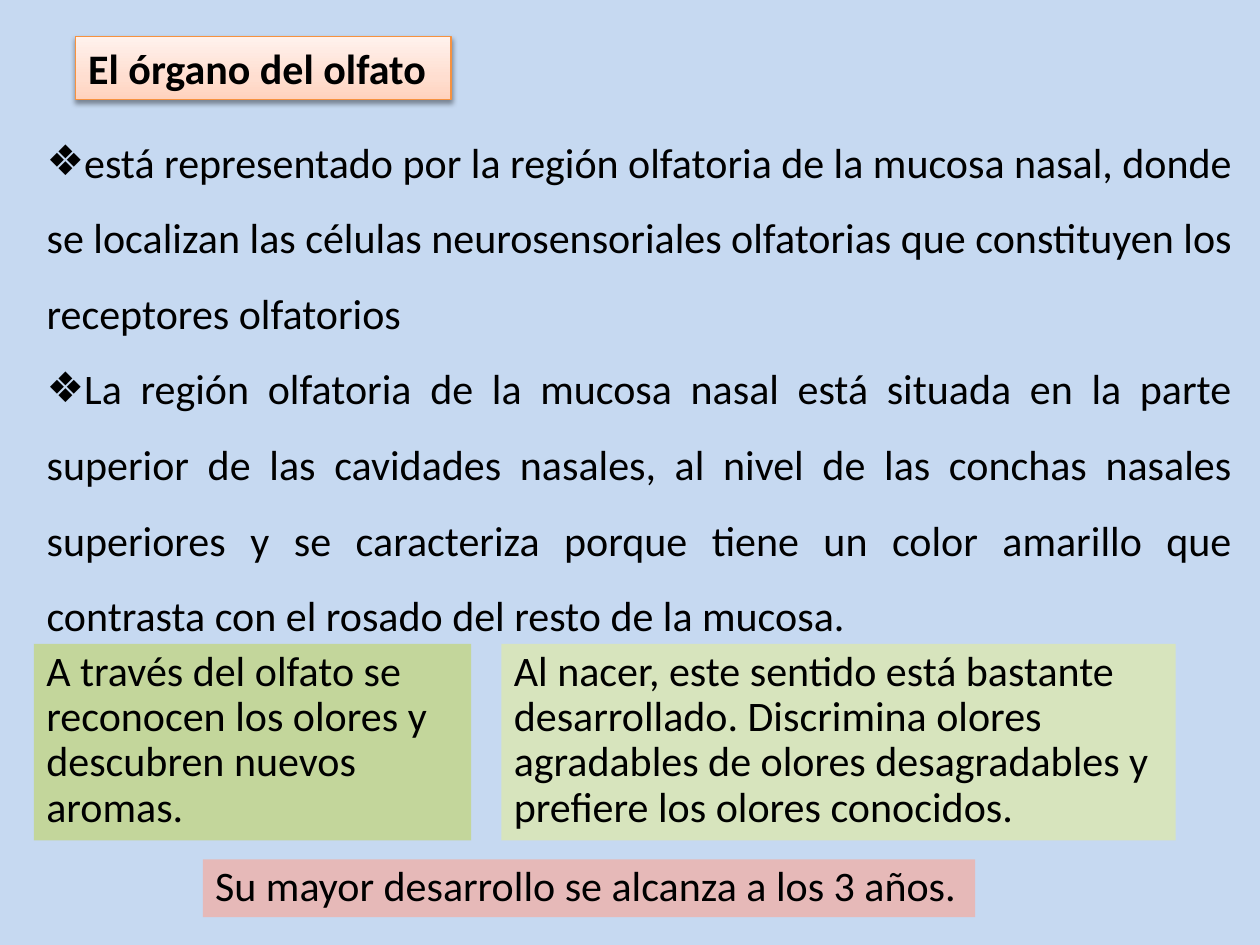
import pptx
import pptx.util
import pptx.dml.color
import pptx.enum.shapes
import pptx.enum.text
import pptx.oxml
import pptx.oxml.ns

Inches, Pt = pptx.util.Inches, pptx.util.Pt
ALIGN = pptx.enum.text.PP_ALIGN
NS = pptx.oxml.ns.nsdecls("a")

COLORS = {
    "background": "C6D9F1",
    "text": "000000",
    "green": "C3D69B",
    "light_green": "D7E4BD",
    "pink": "E6B9B8",
    "title_line": "F69240",
}
TITLE_STOPS = [(0, "FFD2BD"), (35, "FFDED0"), (100, "FFF2ED")]


def rgb(name):
    return pptx.dml.color.RGBColor.from_string(COLORS[name])


class SlideBuilder:
    """Holds the text style and the current slide."""

    font = {"name": "Calibri", "size": Pt(24)}

    def __init__(self, prs):
        self.slide = prs.slides.add_slide(prs.slide_layouts[1])
        fill = self.slide.background.fill
        fill.solid()
        fill.fore_color.rgb = rgb("background")

    def place(self, s, box):
        for name, value in zip(("left", "top", "width", "height"), box):
            setattr(s, name, Inches(value))

    def set_text(self, s, texts, bold=False, bullet=None, **paragraph):
        tf = s.text_frame
        frame = {"word_wrap": True,
                 "vertical_anchor": pptx.enum.text.MSO_ANCHOR.TOP,
                 "auto_size": pptx.enum.text.MSO_AUTO_SIZE.NONE}
        for name, value in frame.items():
            setattr(tf, name, value)
        for i, text in enumerate(texts):
            p = tf.paragraphs[0] if i == 0 else tf.add_paragraph()
            layout = {"alignment": ALIGN.LEFT, "space_before": Pt(0), **paragraph}
            for name, value in layout.items():
                setattr(p, name, value)
            if bullet:
                pPr = p._p.get_or_add_pPr()
                pPr.set("marL", "0")
                pPr.set("indent", str(Inches(-0.31)))
                pPr.append(pptx.oxml.parse_xml(f'<a:buChar {NS} char="{bullet}"/>'))
            r = p.add_run()
            r.text = text
            for name, value in {**self.font, "bold": bold}.items():
                setattr(r.font, name, value)
            r.font.color.rgb = rgb("text")

    def title(self, text, box):
        s = self.slide.shapes.title
        self.place(s, box)
        self.set_text(s, [text], bold=True)
        # Gradient fill, thin outline and soft shadow
        stops = "".join(
            f'<a:gs pos="{pos * 1000}"><a:srgbClr val="{color}"/></a:gs>'
            for pos, color in TITLE_STOPS)
        spPr = s._element.spPr
        spPr.append(pptx.oxml.parse_xml(
            f'<a:gradFill {NS} rotWithShape="1"><a:gsLst>{stops}</a:gsLst>'
            '<a:lin ang="16200000" scaled="0"/></a:gradFill>'))
        s.line.color.rgb = rgb("title_line")
        s.line.width = Pt(0.75)
        spPr.append(pptx.oxml.parse_xml(
            f'<a:effectLst {NS}><a:outerShdw blurRad="{Pt(3.1)}" dist="{Pt(1.6)}" '
            'dir="5400000" rotWithShape="0"><a:srgbClr val="000000">'
            '<a:alpha val="38000"/></a:srgbClr></a:outerShdw></a:effectLst>'))

    def bullets(self, texts, box):
        s = self.slide.placeholders[1]
        self.place(s, box)
        self.set_text(s, texts, bullet="❖", alignment=ALIGN.JUSTIFY, line_spacing=1.5)

    def note(self, text, box, color):
        s = self.slide.shapes.add_shape(
            pptx.enum.shapes.MSO_SHAPE.RECTANGLE, *map(Inches, box))
        s.shadow.inherit = False
        s.fill.solid()
        s.fill.fore_color.rgb = rgb(color)
        s.line.fill.background()
        self.set_text(s, [text], line_spacing=0.9)


def main():
    prs = pptx.Presentation()
    prs.slide_width, prs.slide_height = Inches(10), Inches(7.5)
    b = SlideBuilder(prs)

    # Title and main points
    b.title("El órgano del olfato", (0.6, 0.29, 2.98, 0.5))
    b.bullets([
        "está representado por la región olfatoria de la mucosa nasal, donde se "
        "localizan las células neurosensoriales olfatorias que constituyen los "
        "receptores olfatorios",
        "La región olfatoria de la mucosa nasal está situada en la parte superior "
        "de las cavidades nasales, al nivel de las conchas nasales superiores y se "
        "caracteriza porque tiene un color amarillo que contrasta con el rosado "
        "del resto de la mucosa.",
    ], (0.27, 0.83, 9.61, 4.28))

    # Coloured notes
    b.note("A través del olfato se reconocen los olores y descubren nuevos aromas.",
           (0.27, 5.11, 3.47, 1.56), "green")
    b.note("Al nacer, este sentido está bastante desarrollado. Discrimina olores "
           "agradables de olores desagradables y prefiere los olores conocidos.",
           (3.98, 5.11, 5.35, 1.56), "light_green")
    b.note("Su mayor desarrollo se alcanza a los 3 años.",
           (1.61, 6.82, 6.13, 0.46), "pink")

    prs.save("out.pptx")


if __name__ == "__main__":
    main()
